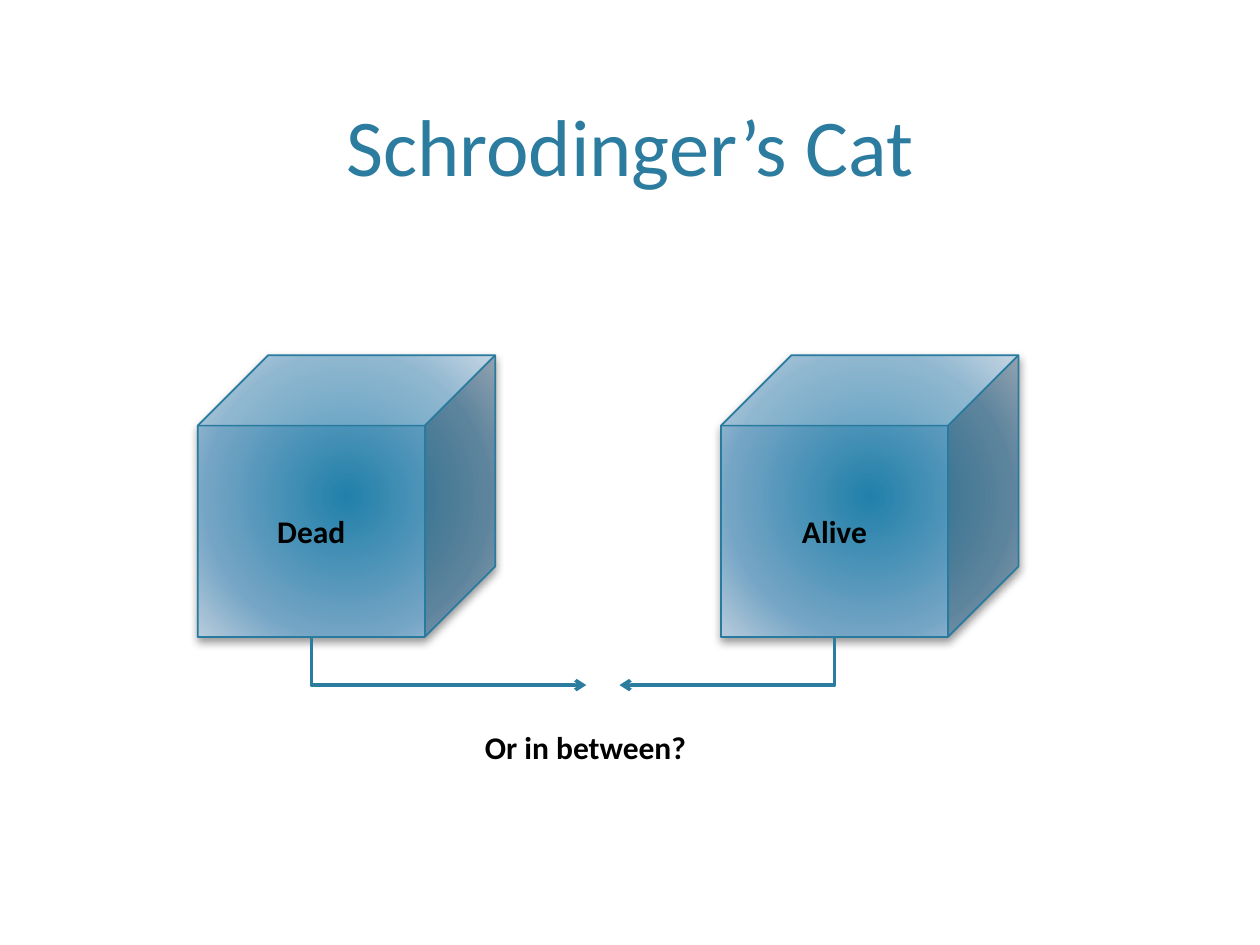
from lxml import etree
from pptx import Presentation
from pptx.dml.color import RGBColor
from pptx.enum.shapes import MSO_CONNECTOR, MSO_SHAPE
from pptx.enum.text import MSO_ANCHOR, MSO_AUTO_SIZE, PP_ALIGN
from pptx.oxml.ns import qn
from pptx.util import Pt

CENTER, LEFT = PP_ALIGN.CENTER, PP_ALIGN.LEFT
MIDDLE, BOTTOM = MSO_ANCHOR.MIDDLE, MSO_ANCHOR.BOTTOM

# Content: each cube has a label, a left edge and the x its arrow points to
TITLE = "Schrodinger’s Cat"
QUESTION = "Or in between?"
CUBES = [("Dead", 113, 335), ("Alive", 412, 354)]

# Style and geometry, in points
FONT, TEAL, EDGE, BLACK = "Calibri", "2C7C9F", "287A9E", "000000"
STOPS = [(0, "2180AA"), (69, "75A5C5"), (100, "B8CCDC")]
CUBE_TOP, CUBE_WIDTH, CUBE_HEIGHT = 203, 170, 161
CUBE_DEPTH = CUBE_HEIGHT / 4
ARROW_TOP, ARROW_DROP = CUBE_TOP + CUBE_HEIGHT, 27.5


def color(code):
    return RGBColor.from_string(code)


def node(parent, tag, **attributes):
    values = {name: str(value) for name, value in attributes.items()}
    return etree.SubElement(parent, qn(tag), values)


def write(frame, text, size, code, align, anchor, bold=False):
    frame.vertical_anchor = anchor
    para = frame.paragraphs[0]
    para.alignment = align
    span = para.add_run()
    span.text = text
    span.font.name, span.font.size, span.font.bold = FONT, Pt(size), bold
    span.font.color.rgb = color(code)


def set_line(shape, code, width):
    shape.line.color.rgb = color(code)
    shape.line.width = Pt(width)


def add_cube(page, label, left):
    cube = page.shapes.add_shape(MSO_SHAPE.CUBE, Pt(left), Pt(CUBE_TOP),
                                 Pt(CUBE_WIDTH), Pt(CUBE_HEIGHT))
    set_line(cube, EDGE, 1)
    cube.shadow.inherit = False
    props = cube._element.spPr

    # Radial gradient
    gradient = node(props, "a:gradFill", rotWithShape=1)
    stops = node(gradient, "a:gsLst")
    for place, code in STOPS:
        node(node(stops, "a:gs", pos=place * 1000), "a:srgbClr", val=code)
    radial = node(gradient, "a:path", path="circle")
    node(radial, "a:fillToRect", l=100000, t=100000, r=100000, b=100000)
    props.find(qn("a:ln")).addprevious(gradient)

    # Soft shadow below
    shadow = node(props.find(qn("a:effectLst")), "a:outerShdw", blurRad=Pt(5),
                  dist=Pt(2), dir=90 * 60000, rotWithShape=0)
    node(node(shadow, "a:srgbClr", val=BLACK), "a:alpha", val=40000)
    write(cube.text_frame, label, 18, BLACK, CENTER, MIDDLE, True)


def add_arrow(page, start, end):
    """Go down from the cube, then sideways; the one-bend shape is turned."""
    middle_x, middle_y = (start + end) / 2, ARROW_TOP + ARROW_DROP / 2
    half = abs(end - start) / 2
    arrow = page.shapes.add_connector(
        MSO_CONNECTOR.ELBOW,
        Pt(middle_x - ARROW_DROP / 2), Pt(middle_y - half),
        Pt(middle_x + ARROW_DROP / 2), Pt(middle_y + half))
    set_line(arrow, TEAL, 2)
    props = arrow._element.spPr
    props.find(qn("a:prstGeom")).set("prst", "bentConnector2")
    turn = props.find(qn("a:xfrm"))
    rightward = end > start
    turn.set("rot", str((270 if rightward else 90) * 60000))
    if rightward:
        turn.set("flipH", "1")
    node(props.find(qn("a:ln")), "a:tailEnd", type="arrow")
    node(props, "a:effectLst")


def main():
    deck = Presentation()
    deck.slide_width, deck.slide_height = Pt(720), Pt(540)
    page = deck.slides.add_slide(deck.slide_layouts[5])

    # Title
    title = page.shapes.title
    title.left, title.top, title.width, title.height = (
        Pt(43.2), Pt(8.6), Pt(633.6), Pt(105))
    write(title.text_frame, TITLE, 46, TEAL, CENTER, BOTTOM)

    # Cubes
    for label, left, _ in CUBES:
        add_cube(page, label, left)

    # Question
    box = page.shapes.add_textbox(Pt(270), Pt(412.5), Pt(145.4), Pt(29))
    box.text_frame.word_wrap = False
    box.text_frame.auto_size = MSO_AUTO_SIZE.SHAPE_TO_FIT_TEXT
    write(box.text_frame, QUESTION, 18, BLACK, LEFT, MSO_ANCHOR.TOP, True)

    # Arrows from the middle of each front face
    for _, left, end in CUBES:
        add_arrow(page, left + (CUBE_WIDTH - CUBE_DEPTH) / 2, end)

    deck.save("out.pptx")


if __name__ == "__main__":
    main()
